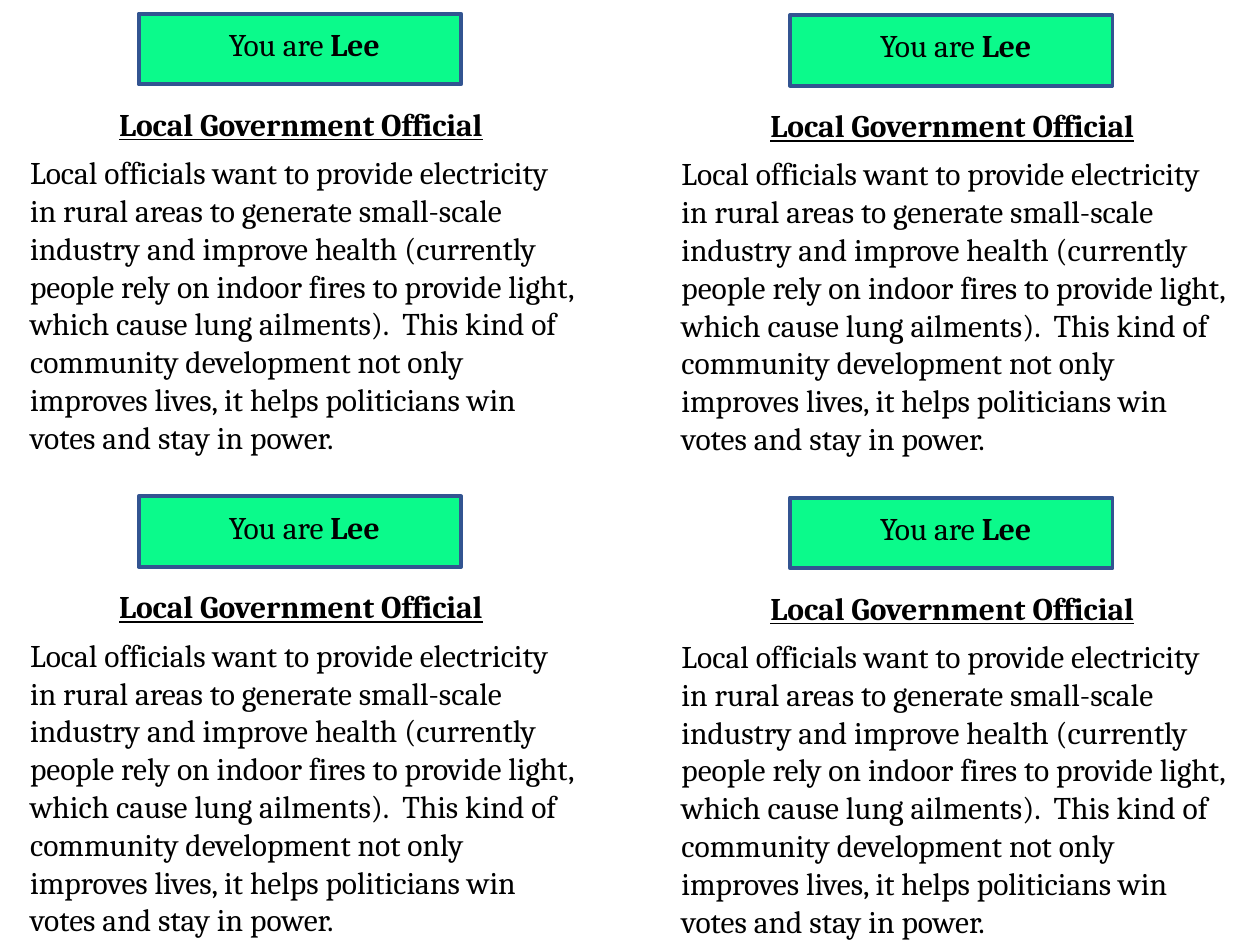
from dataclasses import dataclass
from pptx import Presentation
from pptx.dml.color import RGBColor
from pptx.enum.shapes import MSO_SHAPE
from pptx.enum.text import MSO_AUTO_SIZE, PP_ALIGN
from pptx.slide import Slide
from pptx.util import Inches, Pt

COLORS = {"banner": "0BFA8B", "border": "325491", "text": "000000"}
FONT = "Cambria"
NAME = "Lee"
ROLE = "Local Government Official"
BRIEF = (
    "Local officials want to provide electricity in rural areas to generate "
    "small-scale industry and improve health (currently people rely on indoor "
    "fires to provide light, which cause lung ailments).  This kind of "
    "community development not only improves lives, it helps politicians win "
    "votes and stay in power."
)


@dataclass(frozen=True)
class Run:
    text: str
    bold: bool = False
    underline: bool = False


@dataclass(frozen=True)
class Para:
    runs: tuple[Run, ...]
    align: PP_ALIGN = PP_ALIGN.CENTER
    before: float = 0
    after: float = 0


@dataclass(frozen=True)
class Card:
    left: float
    top: float


PARAS = (
    Para((Run("You are "), Run(NAME, bold=True)), after=18),
    Para((Run(ROLE, bold=True, underline=True), Run(" ")), before=6),
    Para((Run(BRIEF),), PP_ALIGN.LEFT, before=6, after=9),
)
CARDS = [
    Card(0.14 + 5.17 * col, 0.11 + 3.83 * row + 0.01 * col)
    for col in range(2)
    for row in range(2)
]


def rgb(key: str) -> RGBColor:
    return RGBColor.from_string(COLORS[key])


def add_banner(s: Slide, card: Card) -> None:
    sp = s.shapes.add_shape(
        MSO_SHAPE.RECTANGLE,
        Inches(card.left + 0.96), Inches(card.top), Inches(2.56), Inches(0.56),
    )
    sp.shadow.inherit = False
    sp.fill.solid()
    sp.fill.fore_color.rgb = rgb("banner")
    sp.line.color.rgb = rgb("border")
    sp.line.width = Pt(2.25)


def add_text(s: Slide, card: Card) -> None:
    sp = s.shapes.add_textbox(
        Inches(card.left), Inches(card.top + 0.04), Inches(4.55), Inches(3.63)
    )
    tf = sp.text_frame
    tf.word_wrap = True
    tf.auto_size = MSO_AUTO_SIZE.SHAPE_TO_FIT_TEXT
    for i, para in enumerate(PARAS):
        p = tf.add_paragraph() if i else tf.paragraphs[0]
        p.alignment = para.align
        p.space_before, p.space_after = Pt(para.before), Pt(para.after)
        p.font.name, p.font.size = FONT, Pt(18)
        p.font.color.rgb = rgb("text")
        for run in para.runs:
            r = p.add_run()
            r.text = run.text
            r.font.bold, r.font.underline = run.bold, run.underline


def main() -> None:
    """Build a sheet of four identical role cards."""
    prs = Presentation()
    prs.slide_width, prs.slide_height = Inches(10), Inches(7.5)
    s = prs.slides.add_slide(prs.slide_layouts[6])
    for card in CARDS:
        add_banner(s, card)
        add_text(s, card)
    prs.save("out.pptx")


if __name__ == "__main__":
    main()
